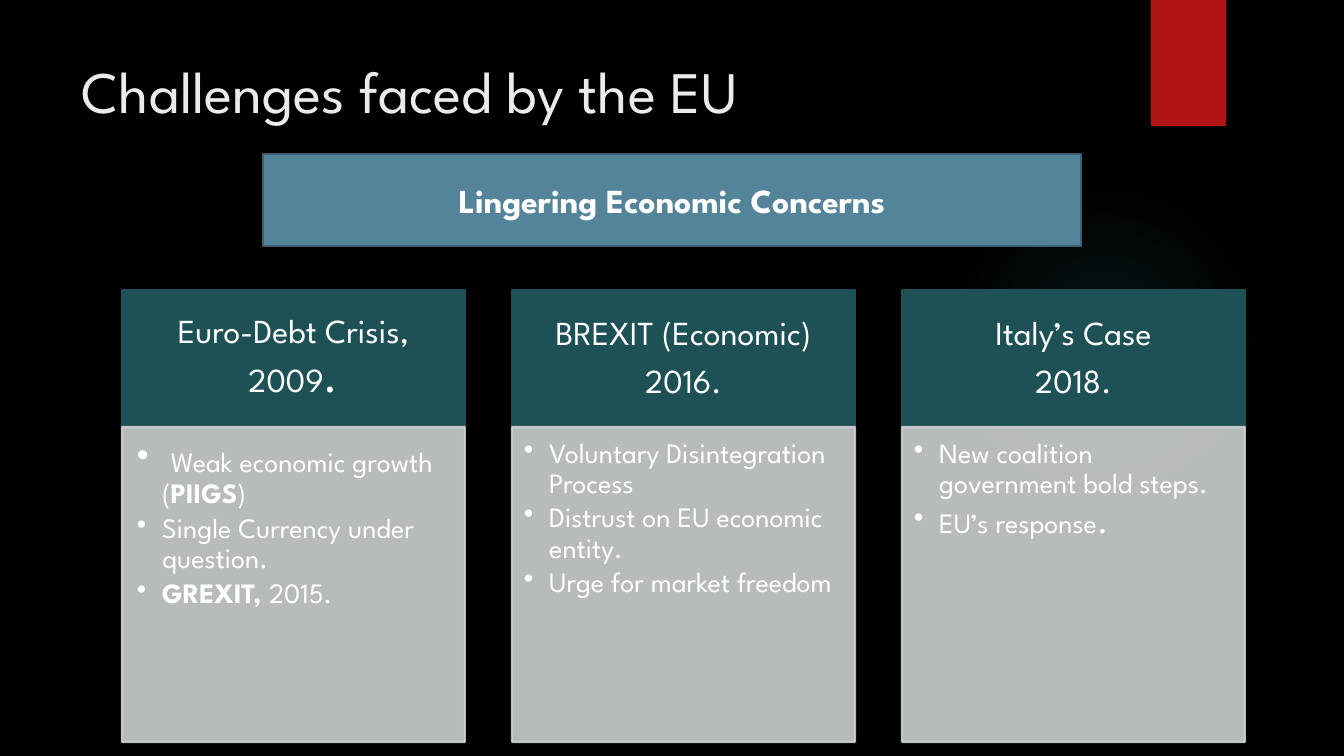
from lxml.etree import SubElement
from pptx import Presentation
from pptx.dml.color import RGBColor
from pptx.enum.shapes import MSO_SHAPE
from pptx.enum.text import MSO_ANCHOR, PP_ALIGN
from pptx.oxml import parse_xml
from pptx.oxml.ns import nsdecls, qn
from pptx.util import Emu, Pt

PX = 914400 / 100.8
FONT = "League Spartan"
BLACK = RGBColor(0x00, 0x00, 0x00)
WHITE = RGBColor(0xFF, 0xFF, 0xFF)
TITLE_GREY = RGBColor(0xEB, 0xEB, 0xEB)
RED = RGBColor(0xB0, 0x15, 0x13)
BLUE = RGBColor(0x54, 0x84, 0x9A)
BLUE_EDGE = RGBColor(0x3E, 0x62, 0x72)
TEAL = RGBColor(0x1E, 0x51, 0x55)
PALE = RGBColor(0xCD, 0xD0, 0xD1)


def add_box(x, y, w, h, fill, line=None, shape=MSO_SHAPE.RECTANGLE, insets=(10, 5, 10, 5)):
    """Add a flat shape; insets are left, top, right, bottom in px."""
    s = slide.shapes.add_shape(shape, *(Emu(round(v * PX)) for v in (x, y, w, h)))
    s.shadow.inherit = False
    if fill is None:
        s.fill.background()
    else:
        s.fill.solid()
        s.fill.fore_color.rgb = fill
    if line is None:
        s.line.fill.background()
    else:
        s.line.color.rgb = line
        s.line.width = Pt(1.5)
    tf = s.text_frame
    tf.word_wrap = True
    tf.margin_left, tf.margin_top, tf.margin_right, tf.margin_bottom = (
        Emu(round(v * PX)) for v in insets)
    return s


def add_runs(p, runs, color=WHITE):
    """Add (text, size, bold) runs to a paragraph."""
    for text, size, bold in runs:
        r = p.add_run()
        r.text = text
        r.font.name = FONT
        r.font.size = Pt(size)
        r.font.bold = bold
        r.font.color.rgb = color


prs = Presentation()
prs.slide_width = Emu(round(1344 * PX))
prs.slide_height = Emu(round(756 * PX))
slide = prs.slides.add_slide(prs.slide_layouts[6])
slide.background.fill.solid()
slide.background.fill.fore_color.rgb = BLACK

# Soft glow and red tab
glow = add_box(949, 184, 310, 310, None, shape=MSO_SHAPE.OVAL)
stops = "".join(
    f'<a:gs pos="{pos}000"><a:srgbClr val="50B9C1"><a:alpha val="{alpha}000"/></a:srgbClr></a:gs>'
    for pos, alpha in ((0, 7), (36, 6), (69, 0)))
no_fill = glow._element.spPr.find(qn("a:noFill"))
no_fill.getparent().replace(no_fill, parse_xml(
    f'<a:gradFill {nsdecls("a")}><a:gsLst>{stops}</a:gsLst><a:path path="circle">'
    '<a:fillToRect l="50000" t="50000" r="50000" b="50000"/></a:path></a:gradFill>'))
add_box(1151, 0, 75, 126, RED)

# Title and banner
title = slide.shapes.add_textbox(*(Emu(round(v * PX)) for v in (72, 50, 1037, 154)))
title.text_frame.word_wrap = True
add_runs(title.text_frame.paragraphs[0], [("Challenges faced by the EU", 42, False)], TITLE_GREY)

banner = add_box(263, 154, 818, 92, BLUE, BLUE_EDGE)
banner.text_frame.vertical_anchor = MSO_ANCHOR.MIDDLE
p = banner.text_frame.paragraphs[0]
p.alignment = PP_ALIGN.CENTER
add_runs(p, [("Lingering Economic Concerns", 24, True)])

# Three columns: heading paragraphs, body insets, bullet paragraphs
WIDE, NARROW = (15, 15, 19, 22), (12, 12, 16, 17)
columns = [
    ([[("Euro-Debt Crisis, 2009", 24, False), (".", 34, False)]], WIDE,
     [[(" ", 25, False), ("Weak economic growth (", 20, False), ("PIIGS", 20, True),
       (")", 20, False)],
      [("Single Currency under question.", 20, False)],
      [("GREXIT, ", 20, True), ("2015.", 20, False)]]),
    ([[("BREXIT (Economic)", 24, False)], [("2016.", 24, False)]], NARROW,
     [[("Voluntary Disintegration Process", 20, False)],
      [("Distrust on EU economic entity.", 20, False)],
      [("Urge for market freedom", 20, False)]]),
    ([[("Italy’s Case", 24, False)], [("2018.", 24, False)]], NARROW,
     [[("New coalition government bold steps.", 20, False)],
      [("EU’s response", 20, False), (".", 25, False)]]),
]
for i, (heading, insets, bullets) in enumerate(columns):
    x = 122 + 390 * i
    head = add_box(x, 290, 343, 137, TEAL, TEAL, insets=(19, 11, 19, 11))
    head.text_frame.vertical_anchor = MSO_ANCHOR.MIDDLE
    body = add_box(x, 427, 343, 315, PALE, PALE, insets=insets)
    body.text_frame.vertical_anchor = MSO_ANCHOR.TOP
    for color in body._element.spPr.iter(qn("a:srgbClr")):
        SubElement(color, qn("a:alpha"), val="90000")

    for s, paragraphs, gap in ((head, heading, 8), (body, bullets, 3)):
        tf = s.text_frame
        for j, runs in enumerate(paragraphs):
            p = tf.add_paragraph() if j else tf.paragraphs[0]
            p.line_spacing = 0.9
            p.space_after = Pt(gap)
            if s is head:
                p.alignment = PP_ALIGN.CENTER
            else:
                p.alignment = PP_ALIGN.LEFT
                pPr = p._p.get_or_add_pPr()
                pPr.set("marL", str(Pt(18)))
                pPr.set("indent", str(-Pt(18)))
                SubElement(pPr, qn("a:buChar"), char="•")
            add_runs(p, runs)

prs.save("out.pptx")
